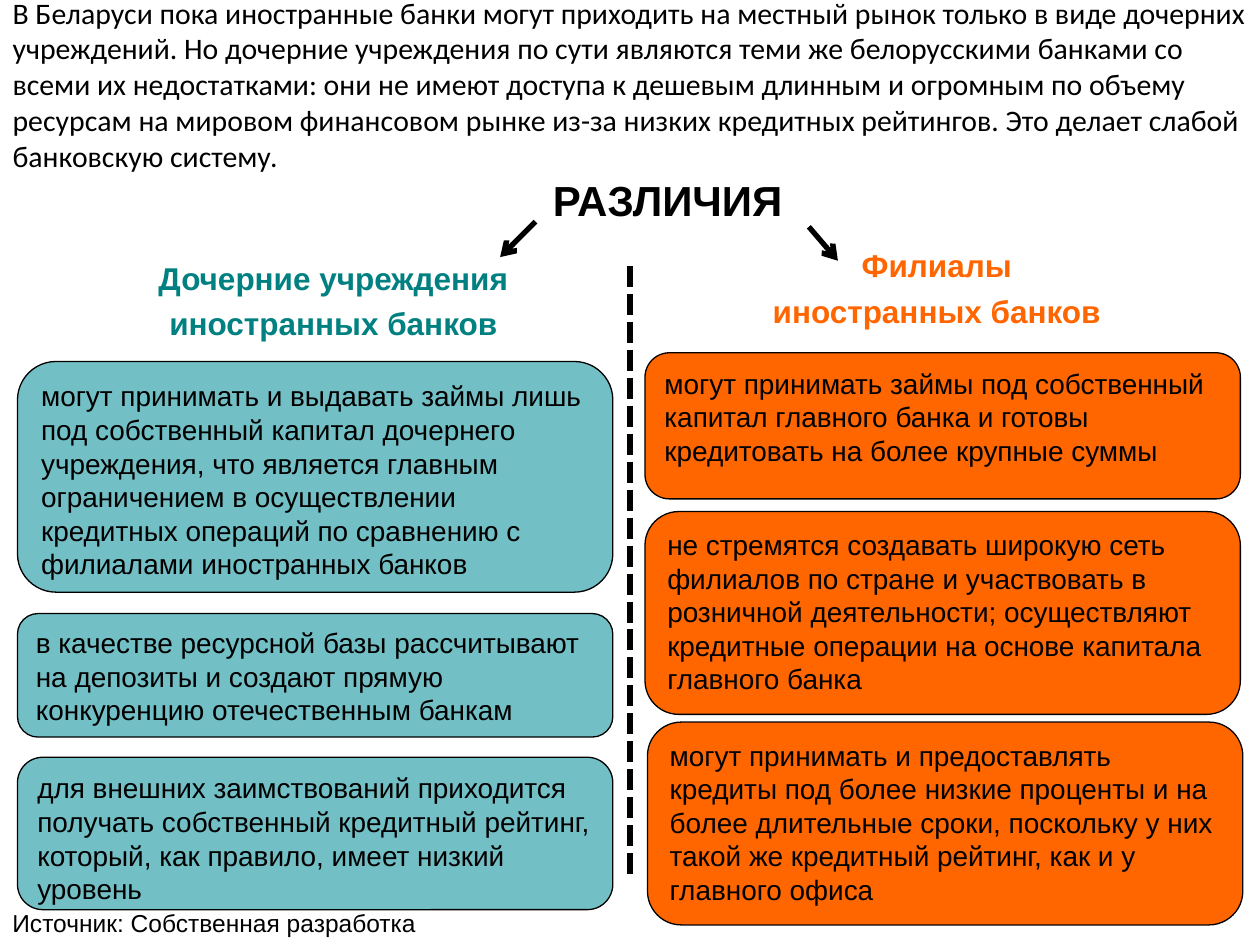
from lxml.etree import SubElement
from pptx import Presentation
from pptx.dml.color import RGBColor
from pptx.enum.dml import MSO_LINE
from pptx.enum.shapes import MSO_CONNECTOR, MSO_SHAPE
from pptx.enum.text import MSO_ANCHOR, MSO_AUTO_SIZE, PP_ALIGN
from pptx.oxml.ns import qn
from pptx.util import Pt

BLACK, TEAL, PALE_TEAL, ORANGE = "000000", "008080", "72BFC5", "FF6600"


def color(hex_string):
    return RGBColor.from_string(hex_string)


def write(box, lines, size, ink=BLACK, font="Arial", bold=False,
          align=PP_ALIGN.LEFT, anchor=MSO_ANCHOR.TOP, spacing=1.0):
    frame = box.text_frame
    frame_format = {"word_wrap": True, "auto_size": MSO_AUTO_SIZE.NONE,
                    "vertical_anchor": anchor}
    for name, value in frame_format.items():
        setattr(frame, name, value)
    frame.text = "\n".join(lines)
    for para in frame.paragraphs:
        para.alignment, para.line_spacing = align, spacing
        for span in para.runs:
            span_format = {"name": font, "size": Pt(size), "bold": bold}
            for name, value in span_format.items():
                setattr(span.font, name, value)
            span.font.color.rgb = color(ink)


deck = Presentation()
deck.slide_width, deck.slide_height = Pt(720), Pt(540)
page = deck.slides.add_slide(deck.slide_layouts[5])

# Introduction
title = page.shapes.title
title_place = {"left": 0, "top": 0, "width": 720, "height": 95.76}
for name, value in title_place.items():
    setattr(title, name, Pt(value))
write(title, [
    "В Беларуси пока иностранные банки могут приходить на местный рынок только "
    "в виде дочерних учреждений. Но дочерние учреждения по сути являются теми же "
    "белорусскими банками со всеми их недостатками: они не имеют доступа к дешевым "
    "длинным и огромным по объему ресурсам на мировом финансовом рынке из-за низких "
    "кредитных рейтингов. Это делает слабой банковскую систему."],
    17, font="Calibri", anchor=MSO_ANCHOR.MIDDLE)

# Two arrows and the dashed divider: x1, y1, x2, y2, weight, is_arrow
lines = [
    (306, 126.7, 285.8, 146.9, 3, True),
    (462.2, 129.6, 478.8, 149, 3, True),
    (360, 151.9, 360, 501.1, 4, False),
]
for *ends, weight, is_arrow in lines:
    line = page.shapes.add_connector(MSO_CONNECTOR.STRAIGHT, *map(Pt, ends))
    line.line.width = Pt(weight)
    line.line.color.rgb = color(BLACK)
    if is_arrow:
        SubElement(line.line._get_or_add_ln(), qn("a:tailEnd"), type="arrow")
    else:
        line.line.dash_style = MSO_LINE.SQUARE_DOT
    SubElement(line._element.spPr, qn("a:effectLst"))

# Headings: place, lines, size, colour
headings = [
    ((84.2, 95.8, 594.7, 31), ["РАЗЛИЧИЯ"], 24, BLACK),
    ((20.2, 139.7, 340.6, 59.8), ["Дочерние учреждения", "иностранных банков"],
     18, TEAL),
    ((381.6, 139.7, 307.4, 45.4), ["Филиалы", "иностранных банков"], 18, ORANGE),
]
for place, heading, size, ink in headings:
    box = page.shapes.add_textbox(*map(Pt, place))
    write(box, heading, size, ink, bold=True, align=PP_ALIGN.CENTER,
          anchor=MSO_ANCHOR.MIDDLE, spacing=1.2)

# Cards of both columns: left, top, height, text
columns = {
    PALE_TEAL: [
        (10, 206.6, 131.8,
         "могут принимать и выдавать займы лишь под собственный капитал дочернего "
         "учреждения, что является главным ограничением в осуществлении кредитных "
         "операций по сравнению с филиалами иностранных банков"),
        (10, 350.6, 70.6,
         "в качестве ресурсной базы рассчитывают на депозиты и создают прямую "
         "конкуренцию отечественным банкам"),
        (10, 432.7, 87.1,
         "для внешних заимствований приходится получать собственный кредитный "
         "рейтинг, который, как правило, имеет низкий уровень"),
    ],
    ORANGE: [
        (368.6, 201.6, 83.5,
         "могут принимать займы под собственный капитал главного банка и готовы "
         "кредитовать на более крупные суммы"),
        (368.6, 292.3, 115.9,
         "не стремятся создавать широкую сеть филиалов по стране и участвовать в "
         "розничной деятельности; осуществляют кредитные операции на основе "
         "капитала главного банка"),
        (370, 412.6, 115.9,
         "могут принимать и предоставлять кредиты под более низкие проценты и на "
         "более длительные сроки, поскольку у них такой же кредитный рейтинг, как "
         "и у главного офиса"),
    ],
}
CARD_WIDTH = 340.2
for fill, cards in columns.items():
    for left, top, height, text in cards:
        card = page.shapes.add_shape(MSO_SHAPE.FLOWCHART_ALTERNATE_PROCESS,
                                     Pt(left), Pt(top), Pt(CARD_WIDTH), Pt(height))
        card.shadow.inherit = False
        card.fill.solid()
        card.fill.fore_color.rgb = color(fill)
        card.line.color.rgb = color(BLACK)
        card.line.width = Pt(0.75)
        write(card, [text], 16)

# Source note
note = page.shapes.add_textbox(Pt(0), Pt(515.5), Pt(318.2), Pt(24.5))
write(note, ["Источник: Собственная разработка"], 14)

deck.save("out.pptx")
